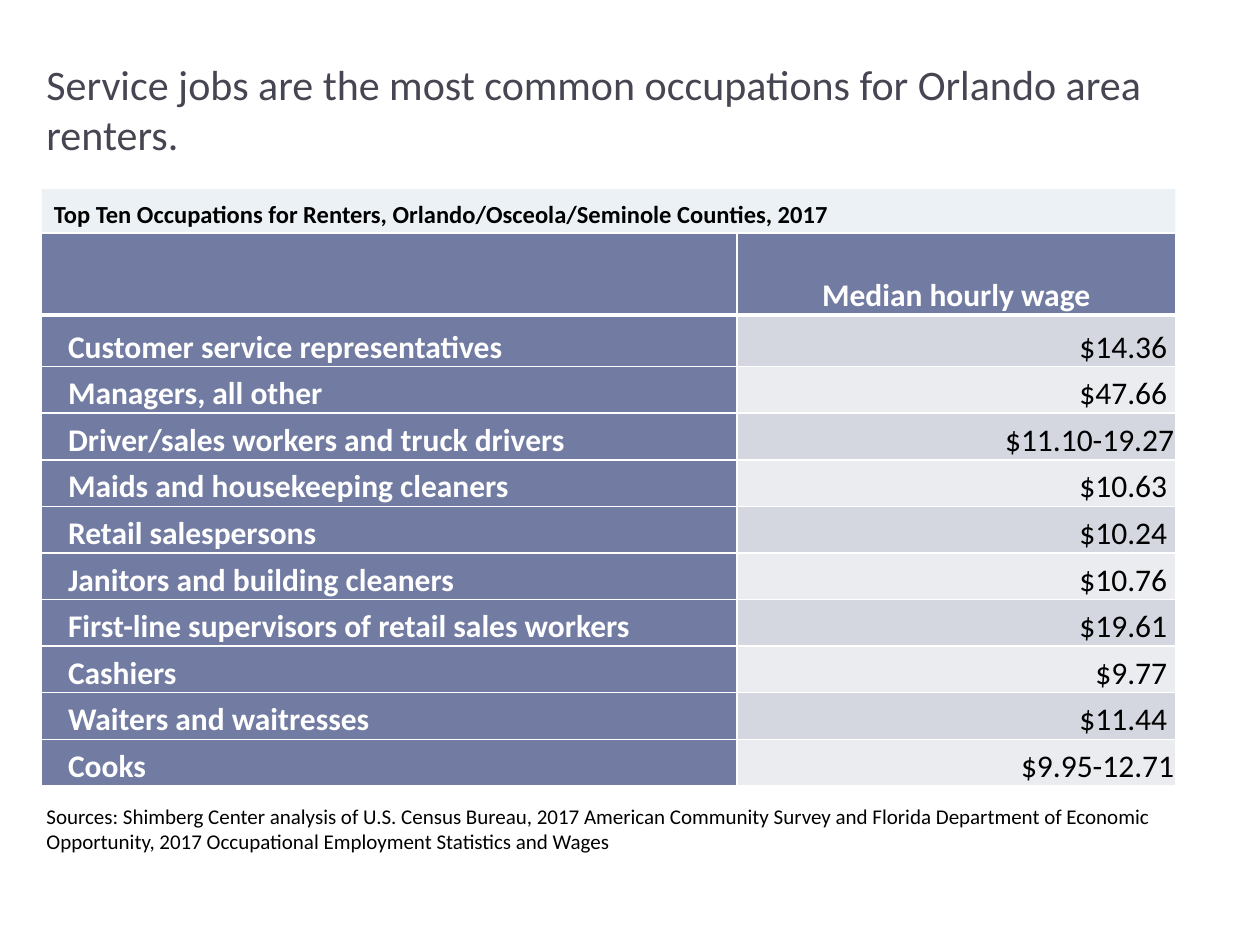
import pptx
import pptx.dml.color
import pptx.enum.shapes
import pptx.enum.text
import pptx.oxml
import pptx.oxml.ns
import pptx.util

RGBColor = pptx.dml.color.RGBColor
ALIGN = pptx.enum.text.PP_ALIGN
ANCHOR = pptx.enum.text.MSO_ANCHOR

PX = 9144  # EMU per px, 100 px to the inch
FONT = "Calibri"
WHITE = RGBColor(0xFF, 0xFF, 0xFF)
BLACK = RGBColor(0, 0, 0)
SLATE = RGBColor(0x46, 0x46, 0x53)
PALE = RGBColor(0xEC, 0xF1, 0xF5)
INDIGO = RGBColor(0x72, 0x7C, 0xA3)
BANDS = (RGBColor(0xD5, 0xD7, 0xE0), RGBColor(0xEB, 0xEC, 0xF0))

TITLE = "Service jobs are the most common occupations for Orlando area renters."
CAPTION = "Top Ten Occupations for Renters, Orlando/Osceola/Seminole Counties, 2017"
SOURCES = (
    "Sources: Shimberg Center analysis of U.S. Census Bureau, 2017 American "
    "Community Survey and Florida Department of Economic Opportunity, 2017 "
    "Occupational Employment Statistics and Wages"
)
WAGES = [
    ("Customer service representatives", "$14.36 "),
    ("Managers, all other", "$47.66 "),
    ("Driver/sales workers and truck drivers", "$11.10-19.27"),
    ("Maids and housekeeping cleaners", "$10.63 "),
    ("Retail salespersons", "$10.24 "),
    ("Janitors and building cleaners", "$10.76 "),
    ("First-line supervisors of retail sales workers", "$19.61 "),
    ("Cashiers", "$9.77 "),
    ("Waiters and waitresses", "$11.44 "),
    ("Cooks", "$9.95-12.71"),
]


def px(*lengths):
    return [pptx.util.Emu(n * PX) for n in lengths]


def set_attrs(obj, values):
    for name, value in values.items():
        setattr(obj, name, value)


def write(tf, text, size, color, bold=False, para=None):
    """Put one formatted paragraph in a text frame."""
    p = tf.paragraphs[0]
    set_attrs(p, para or {})
    r = p.add_run()
    r.text = text
    set_attrs(r.font, {"name": FONT, "size": pptx.util.Pt(size), "bold": bold})
    r.font.color.rgb = color


def add_text(s, box, text, size, color, anchor=ANCHOR.TOP):
    tf = s.shapes.add_textbox(*px(*box)).text_frame
    set_attrs(tf, {"word_wrap": True, "vertical_anchor": anchor})
    write(tf, text, size, color)


def add_caption(s, box):
    sp = s.shapes.add_shape(pptx.enum.shapes.MSO_SHAPE.RECTANGLE, *px(*box))
    sp.shadow.inherit = False
    sp.fill.solid()
    sp.fill.fore_color.rgb = PALE
    sp.line.fill.background()
    tf = sp.text_frame
    set_attrs(tf, {"word_wrap": True, "vertical_anchor": ANCHOR.TOP})
    gap = pptx.util.Pt(10)
    write(tf, CAPTION, 14, BLACK, True, {
        "alignment": ALIGN.LEFT, "line_spacing": 1.12,
        "space_before": gap, "space_after": gap,
    })


def style_cell(cell, fill, margins, top=1, bottom=1):
    """Give a cell its fill, margins and white borders (widths in points)."""
    tc_pr = cell._tc.get_or_add_tcPr()
    for side, width in (("L", 1), ("R", 1), ("T", top), ("B", bottom)):
        tc_pr.append(pptx.oxml.parse_xml(
            f'<a:ln{side} {pptx.oxml.ns.nsdecls("a")} w="{width * 12700}">'
            f'<a:solidFill><a:srgbClr val="{WHITE}"/></a:solidFill></a:ln{side}>'
        ))
    cell.fill.solid()
    cell.fill.fore_color.rgb = fill
    cell.vertical_anchor = ANCHOR.BOTTOM
    sides = ("margin_left", "margin_top", "margin_right", "margin_bottom")
    set_attrs(cell, dict(zip(sides, px(*margins))))


def add_wage_table(s, box):
    count = len(WAGES) + 1
    table = s.shapes.add_table(count, 2, *px(*box)).table
    name_w = 552
    for col, width in zip(table.columns, px(name_w, box[2] - name_w)):
        col.width = width
    for row, height in zip(table.rows, px(65, 41, *[37] * (count - 2))):
        row.height = height

    for col in range(2):
        style_cell(table.cell(0, col), INDIGO, (7, 0, 7, 0), bottom=3)
    write(table.cell(0, 1).text_frame, "Median hourly wage", 18, WHITE, True,
          {"alignment": ALIGN.CENTER, "line_spacing": 1.07})

    for i, (job, wage) in enumerate(WAGES):
        name_cell, wage_cell = table.cell(i + 1, 0), table.cell(i + 1, 1)
        for cell, fill in ((name_cell, INDIGO), (wage_cell, BANDS[i % 2])):
            style_cell(cell, fill, (1, 1, 1, 0), top=1 if i else 3)
        write(name_cell.text_frame, job, 18, WHITE, True)
        p_pr = name_cell.text_frame.paragraphs[0]._p.get_or_add_pPr()
        p_pr.set("marL", str(20 * PX))
        write(wage_cell.text_frame, wage, 18, BLACK, False,
              {"alignment": ALIGN.RIGHT})


def main():
    prs = pptx.Presentation()
    prs.slide_width, prs.slide_height = px(1000, 750)
    s = prs.slides.add_slide(prs.slide_layouts[6])
    add_text(s, (27, 64, 934, 67), TITLE, 24, SLATE, ANCHOR.BOTTOM)
    add_caption(s, (33, 150, 900, 35))
    add_text(s, (27, 633, 959, 50), SOURCES, 12, BLACK)
    add_wage_table(s, (33, 185, 900, 440))
    prs.save("out.pptx")


if __name__ == "__main__":
    main()
